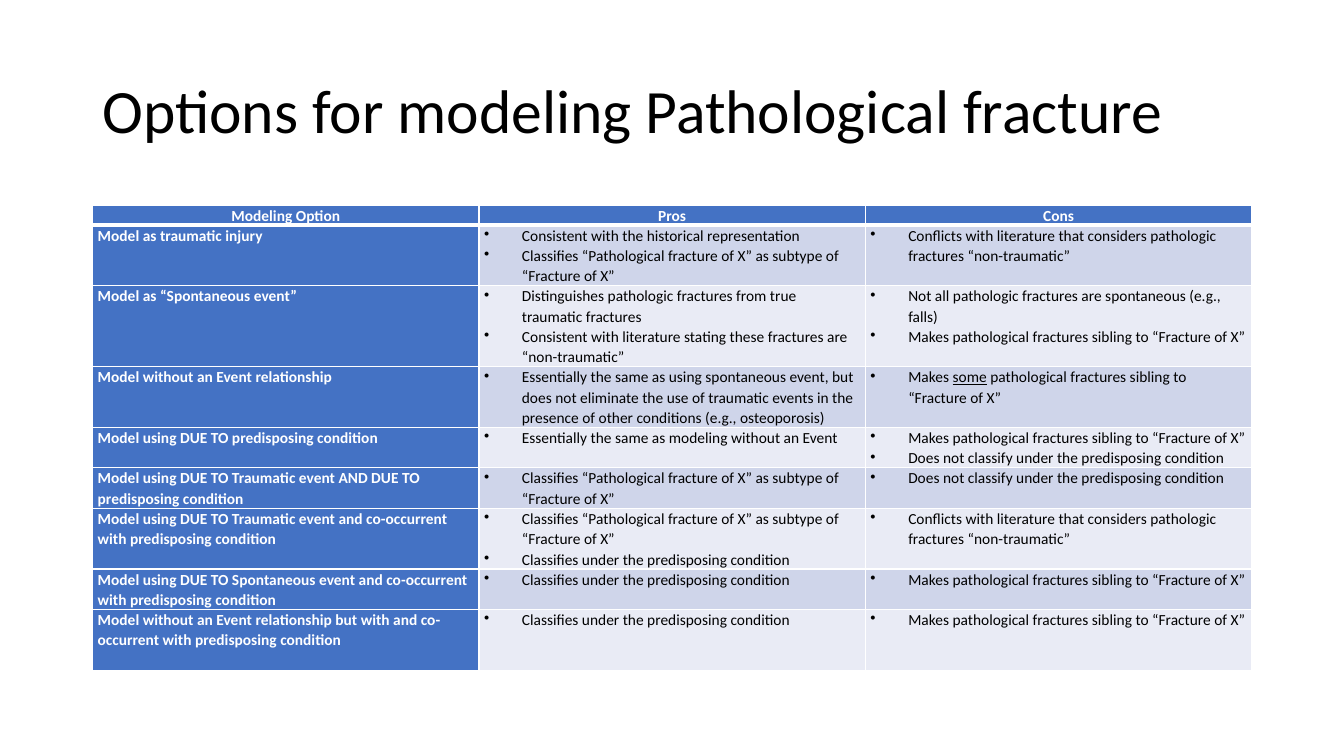
"""Build the slide that compares ways of modeling a pathological fracture."""
from lxml.etree import SubElement
from pptx import Presentation
from pptx.dml.color import RGBColor as RGB
from pptx.enum.text import MSO_ANCHOR as Anchor, PP_ALIGN as Align
from pptx.oxml import parse_xml
from pptx.oxml.ns import nsdecls, qn
from pptx.util import Pt

COLORS = {
    "ink": "000000",
    "white": "FFFFFF",
    "blue": "4472C4",
    "odd": "CFD5EA",
    "even": "E9EBF5",
}
LINE_HEIGHT = 14.45
COLUMN_WIDTH = 276
BULLET_INDENT = 27

SUBTYPE = "Classifies “Pathological fracture of X” as subtype of “Fracture of X”"
SIBLING = "Makes pathological fractures sibling to “Fracture of X”"
UNDER = "Classifies under the predisposing condition"
NOT_UNDER = "Does not classify under the predisposing condition"
CONFLICT = "Conflicts with literature that considers pathologic fractures “non-traumatic”"

HEADINGS = ["Modeling Option", "Pros", "Cons"]
OPTIONS = [
    (3, "Model as traumatic injury",
     ["Consistent with the historical representation", SUBTYPE], [CONFLICT]),
    (4, "Model as “Spontaneous event”",
     ["Distinguishes pathologic fractures from true traumatic fractures",
      "Consistent with literature stating these fractures are “non-traumatic”"],
     ["Not all pathologic fractures are spontaneous (e.g., falls)", SIBLING]),
    (3, "Model without an Event relationship",
     ["Essentially the same as using spontaneous event, but does not eliminate the use of "
      "traumatic events in the presence of other conditions (e.g., osteoporosis)"],
     ["Makes _some_ pathological fractures sibling to “Fracture of X”"]),
    (2, "Model using DUE TO predisposing condition",
     ["Essentially the same as modeling without an Event"], [SIBLING, NOT_UNDER]),
    (2, "Model using DUE TO Traumatic event AND DUE TO predisposing condition",
     [SUBTYPE], [NOT_UNDER]),
    (3, "Model using DUE TO Traumatic event and co-occurrent with predisposing condition",
     [SUBTYPE, UNDER], [CONFLICT]),
    (2, "Model using DUE TO Spontaneous event and co-occurrent with predisposing condition",
     [UNDER], [SIBLING]),
    (3, "Model without an Event relationship but with and co-occurrent with predisposing condition",
     [UNDER], [SIBLING]),
]


class SlideBuilder:
    """Holds the font and the current slide and adds elements to it."""

    def __init__(self, slide, font_name):
        """Keep the slide and the font used on it."""
        self.slide = slide
        self.font_name = font_name

    def add_text(self, paragraph, text, color, size, bold=False, **layout):
        """Fill a paragraph, underlining what stands between underscores."""
        for name, value in layout.items():
            setattr(paragraph, name, value)
        for index, part in enumerate(text.split("_")):
            run = paragraph.add_run()
            run.text = part
            font_format = {"name": self.font_name, "size": Pt(size),
                           "bold": bold, "underline": index % 2 == 1}
            for name, value in font_format.items():
                setattr(run.font, name, value)
            run.font.color.rgb = RGB.from_string(COLORS[color])

    def title(self, text, left, top, width, height):
        """Add the slide title."""
        frame = self.slide.shapes.add_textbox(
            Pt(left), Pt(top), Pt(width), Pt(height)).text_frame
        frame.word_wrap = True
        frame.vertical_anchor = Anchor.MIDDLE
        self.add_text(frame.paragraphs[0], text, "ink", 44, line_spacing=0.9)

    def bullet(self, paragraph):
        """Give a paragraph a hanging bullet."""
        properties = paragraph._p.get_or_add_pPr()
        properties.set("marL", str(Pt(BULLET_INDENT)))
        properties.set("indent", str(-Pt(BULLET_INDENT)))
        SubElement(properties, qn("a:buChar"), char="•")

    def borders(self, cell, top, bottom):
        """Draw white borders around a cell."""
        widths = {"lnL": 1, "lnR": 1, "lnT": top, "lnB": bottom}
        for index, (tag, width) in enumerate(widths.items()):
            cell._tc.get_or_add_tcPr().insert(index, parse_xml(
                f'<a:{tag} {nsdecls("a")} w="{Pt(width)}"><a:solidFill>'
                f'<a:srgbClr val="{COLORS["white"]}"/></a:solidFill></a:{tag}>'))

    def cell(self, cell, texts, fill, color, bold=False, bulleted=False,
             alignment=Align.LEFT, top=1, bottom=1):
        """Fill and style one table cell."""
        margins = {"margin_left": Pt(3.6), "margin_right": Pt(3.6),
                   "margin_top": Pt(0), "margin_bottom": Pt(0)}
        for name, value in margins.items():
            setattr(cell, name, value)
        cell.fill.solid()
        cell.fill.fore_color.rgb = RGB.from_string(COLORS[fill])
        self.borders(cell, top, bottom)
        frame = cell.text_frame
        for index, text in enumerate(texts):
            paragraph = frame.add_paragraph() if index else frame.paragraphs[0]
            self.add_text(paragraph, text, color, 11, bold,
                          alignment=alignment, line_spacing=1.07)
            if bulleted:
                self.bullet(paragraph)

    def table(self, headings, options, left, top):
        """Add the table of options with their pros and cons."""
        lines = [1] + [option[0] for option in options]
        table = self.slide.shapes.add_table(
            len(lines), len(headings), Pt(left), Pt(top),
            Pt(COLUMN_WIDTH * len(headings)), Pt(LINE_HEIGHT * sum(lines))).table
        table.first_row = table.horz_banding = False
        for column in table.columns:
            column.width = Pt(COLUMN_WIDTH)
        for row, count in zip(table.rows, lines):
            row.height = Pt(LINE_HEIGHT * count)
        for index, heading in enumerate(headings):
            self.cell(table.cell(0, index), [heading], "blue", "white", bold=True,
                      alignment=Align.CENTER, bottom=3)
        for row, (_, option, pros, cons) in enumerate(options, 1):
            top_border = 3 if row == 1 else 1
            band = "odd" if row % 2 else "even"
            self.cell(table.cell(row, 0), [option], "blue", "white", bold=True, top=top_border)
            for column, points in enumerate((pros, cons), 1):
                self.cell(table.cell(row, column), points, band, "ink",
                          bulleted=True, top=top_border)


def main():
    """Create the presentation and save it."""
    presentation = Presentation()
    presentation.slide_width, presentation.slide_height = Pt(960), Pt(540)
    builder = SlideBuilder(
        presentation.slides.add_slide(presentation.slide_layouts[6]), "Calibri")
    builder.title("Options for modeling Pathological fracture", 66, 28.75, 828, 104.4)
    builder.table(HEADINGS, OPTIONS, 66.2, 146.4)
    presentation.save("out.pptx")


if __name__ == "__main__":
    main()
